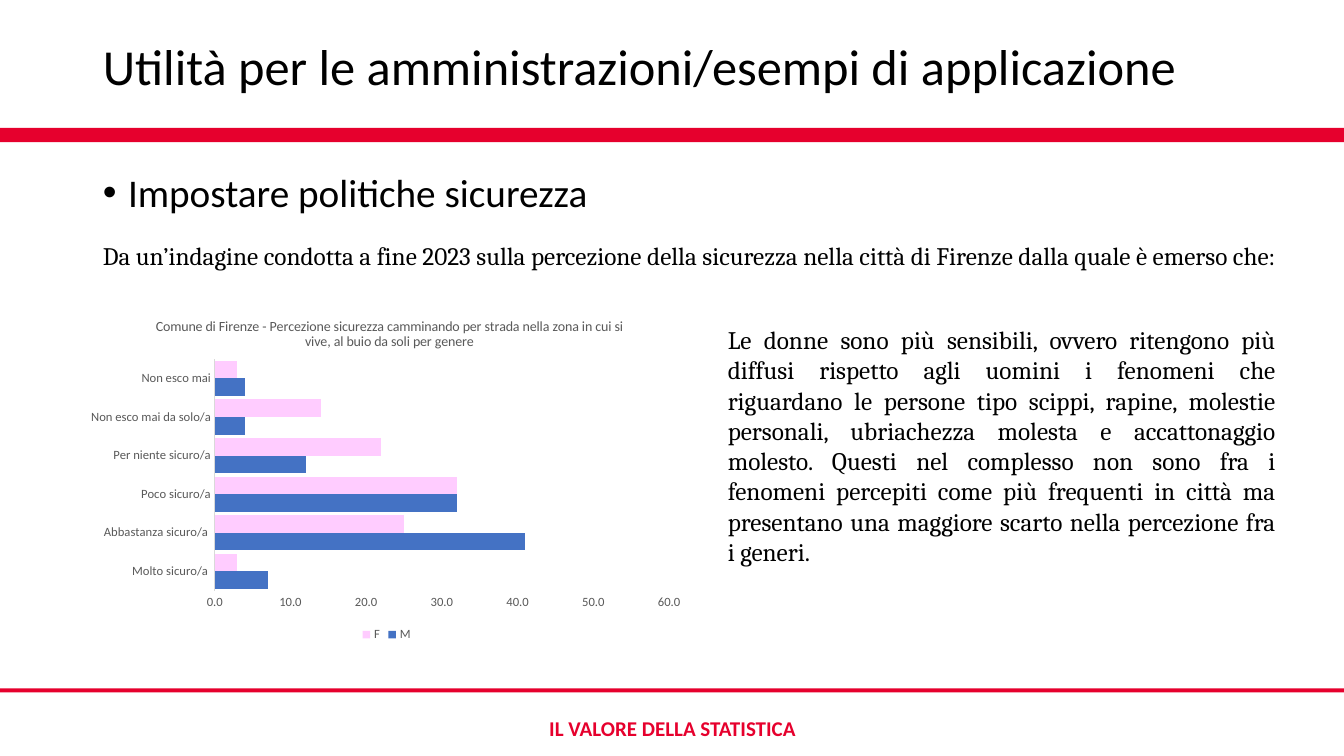
import pptx
import pptx.chart.data
import pptx.dml.color
import pptx.enum.chart
import pptx.enum.shapes
import pptx.enum.text
import pptx.oxml
import pptx.oxml.ns
import pptx.util
from dataclasses import dataclass
from pptx.util import Inches, Pt

RGB = pptx.dml.color.RGBColor.from_string
ALIGN = pptx.enum.text.PP_ALIGN
qn = pptx.oxml.ns.qn


@dataclass(frozen=True)
class Theme:
    red: str = "E6002D"
    ink: str = "000000"
    grey: str = "595959"
    axis: str = "D9D9D9"
    men: str = "4472C4"
    women: str = "FFCCFF"
    sans: str = "Calibri"
    serif: str = "Cambria"
    title: int = 36
    bullet: int = 28
    text: int = 18
    footer: int = 15
    chart_title: int = 10
    chart_label: int = 9


theme = Theme()


def style(font, face, size, color, bold=False):
    font.name, font.size, font.bold = face, Pt(size), bold
    font.color.rgb = RGB(color)


def place_in_chart(part, **fractions):
    """Fix a chart title or plot area at fractions of the chart frame."""
    layout = part.find(qn("c:layout"))
    if layout is None:
        layout = pptx.oxml.parse_xml(f"<c:layout {pptx.oxml.ns.nsdecls('c')}/>")
        part.insert(0, layout)
    manual = layout.makeelement(qn("c:manualLayout"))
    layout.append(manual)
    for tag, value in fractions.items():
        setting = manual.makeelement(qn(f"c:{tag}"), {"val": str(value)})
        manual.append(setting)


deck = pptx.Presentation()
deck.slide_width, deck.slide_height = Inches(13.33), Inches(7.5)
slide = deck.slides.add_slide(deck.slide_layouts[1])

# Red bands and footer
for top, height in ((6.83, 0.04), (1.27, 0.14)):
    band = slide.shapes.add_shape(
        pptx.enum.shapes.MSO_SHAPE.RECTANGLE, 0, Inches(top), deck.slide_width, Inches(height))
    band.shadow.inherit = False
    band.fill.solid()
    band.fill.fore_color.rgb = RGB(theme.red)
    band.line.fill.background()

footer = slide.shapes.add_textbox(Inches(3.78), Inches(7.05), Inches(5.78), Inches(0.35))
footer.text_frame.word_wrap = True
motto = footer.text_frame.paragraphs[0]
motto.alignment = ALIGN.CENTER
motto_run = motto.add_run()
motto_run.text = "IL VALORE DELLA STATISTICA"
style(motto_run.font, theme.sans, theme.footer, theme.red, bold=True)

# Title
heading = slide.shapes.title
heading.left, heading.top, heading.width, heading.height = map(Inches, (0.92, 0.15, 11.5, 1.07))
heading.text_frame.auto_size = pptx.enum.text.MSO_AUTO_SIZE.NONE
heading.text_frame.vertical_anchor = pptx.enum.text.MSO_ANCHOR.MIDDLE
heading_line = heading.text_frame.paragraphs[0]
heading_line.alignment = ALIGN.LEFT
heading_line.line_spacing = 0.9
heading_run = heading_line.add_run()
heading_run.text = "Utilità per le amministrazioni/esempi di applicazione"
style(heading_run.font, theme.sans, theme.title, theme.ink)

# Bullet and introduction
body = slide.placeholders[1]
body.left, body.top, body.width, body.height = map(Inches, (0.92, 1.62, 12.08, 5.14))
body.text_frame.auto_size = pptx.enum.text.MSO_AUTO_SIZE.NONE
bullet = body.text_frame.paragraphs[0]
intro = body.text_frame.add_paragraph()
body_lines = (
    (bullet, "Impostare politiche sicurezza", theme.sans, theme.bullet, 0, 0.25, "buChar"),
    (intro, "Da un’indagine condotta a fine 2023 sulla percezione della sicurezza nella città "
     "di Firenze dalla quale è emerso che:", theme.serif, theme.text, 10, 0, "buNone"),
)
for line, wording, face, size, before, indent, marker in body_lines:
    properties = line._p.get_or_add_pPr()
    properties.set("marL", str(Inches(indent)))
    properties.set("indent", str(-Inches(indent)))
    attributes = {"char": "•"} if marker == "buChar" else {}
    properties.append(properties.makeelement(qn(f"a:{marker}"), attributes))
    line.alignment = ALIGN.JUSTIFY
    line.space_before, line.space_after = Pt(before), Pt(8)
    run = line.add_run()
    run.text = wording
    style(run.font, face, size, theme.ink)

# Findings
findings = slide.shapes.add_textbox(Inches(7.12), Inches(3.17), Inches(5.63), Inches(2.52))
findings.text_frame.word_wrap = True
finding = findings.text_frame.paragraphs[0]
finding.alignment = ALIGN.JUSTIFY
finding_run = finding.add_run()
finding_run.text = (
    "Le donne sono più sensibili, ovvero ritengono più diffusi rispetto agli uomini i fenomeni "
    "che riguardano le persone tipo scippi, rapine, molestie personali, ubriachezza molesta e "
    "accattonaggio molesto. Questi nel complesso non sono fra i fenomeni percepiti come più "
    "frequenti in città ma presentano una maggiore scarto nella percezione fra i generi.")
style(finding_run.font, theme.serif, theme.text, theme.ink)

# Perceived safety by gender
answers = pptx.chart.data.CategoryChartData(number_format="0.0")
answers.categories = ["Molto sicuro/a ", "Abbastanza sicuro/a ", "Poco sicuro/a",
                      "Per niente sicuro/a", "Non esco mai da solo/a", "Non esco mai"]
answers.add_series("M", (7, 41, 32, 12, 4, 4))
answers.add_series("F", (3, 25, 32, 22, 14, 3))
chart = slide.shapes.add_chart(
    pptx.enum.chart.XL_CHART_TYPE.BAR_CLUSTERED,
    Inches(0.79), Inches(2.98), Inches(6.09), Inches(3.43), answers).chart
style(chart.font, theme.sans, theme.chart_title, theme.ink)

chart.has_title = True
chart_title_run = chart.chart_title.text_frame.paragraphs[0].add_run()
chart_title_run.text = ("Comune di Firenze - Percezione sicurezza camminando per strada "
                        "nella zona in cui si vive, al buio da soli per genere")
style(chart_title_run.font, theme.sans, theme.chart_title, theme.grey)
place_in_chart(chart.chart_title._element, xMode="edge", yMode="edge", x=0.12, y=0.04)
place_in_chart(chart._chartSpace.chart.plotArea, layoutTarget="inner",
               xMode="edge", yMode="edge", x=0.22, y=0.17, w=0.74, h=0.67)

bars = chart.plots[0]
bars.gap_width, bars.overlap = 20, 0
bars.vary_by_categories = False
for series, color in zip(bars.series, (theme.men, theme.women)):
    series.format.fill.solid()
    series.format.fill.fore_color.rgb = RGB(color)

for axis in (chart.category_axis, chart.value_axis):
    axis.has_major_gridlines = False
    axis.major_tick_mark = axis.minor_tick_mark = pptx.enum.chart.XL_TICK_MARK.NONE
    style(axis.tick_labels.font, theme.sans, theme.chart_label, theme.grey)
chart.category_axis.format.line.color.rgb = RGB(theme.axis)
chart.category_axis.format.line.width = Pt(0.75)
percent_axis = chart.value_axis
percent_axis.format.line.fill.background()
percent_axis.minimum_scale, percent_axis.maximum_scale, percent_axis.major_unit = 0, 60, 10
percent_axis.tick_labels.number_format = "0.0"
percent_axis.tick_labels.number_format_is_linked = False

chart.has_legend = True
chart.legend.position = pptx.enum.chart.XL_LEGEND_POSITION.BOTTOM
chart.legend.include_in_layout = False
style(chart.legend.font, theme.sans, theme.chart_label, theme.grey)

deck.save("out.pptx")
